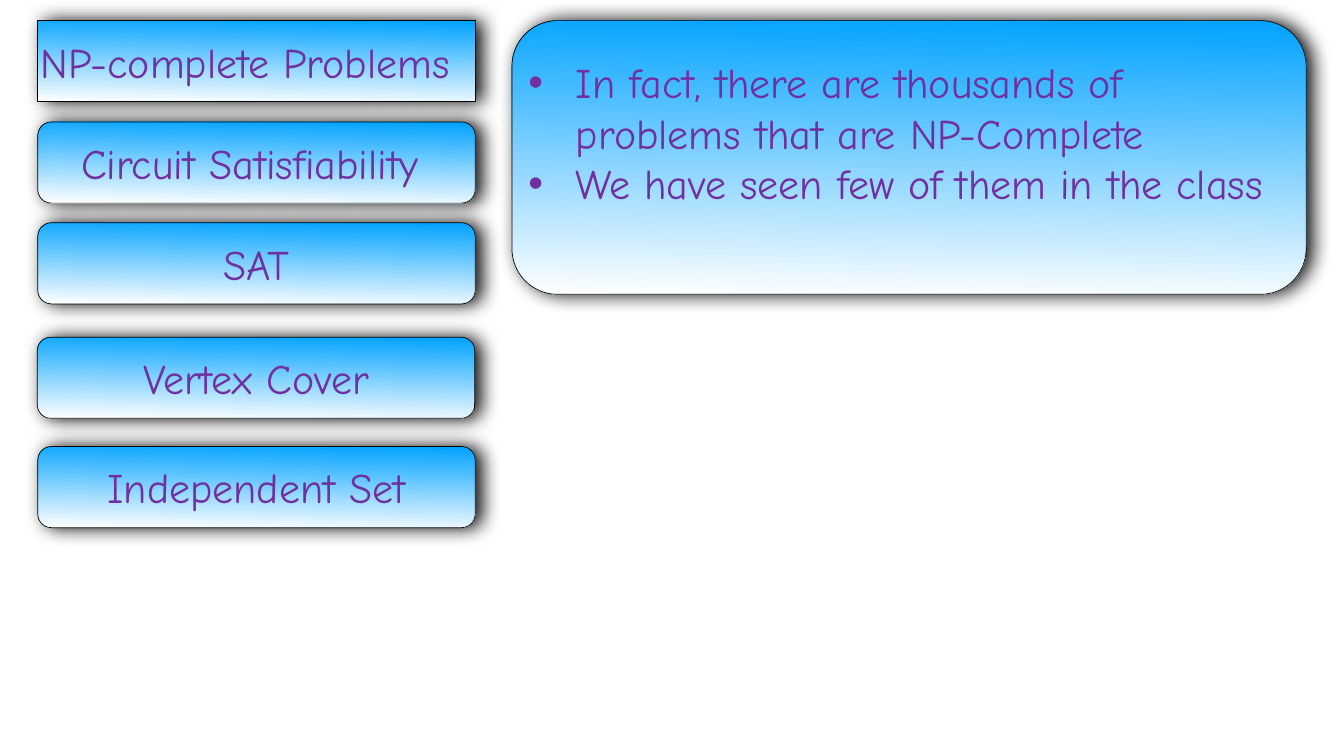
from lxml.etree import SubElement
from pptx import Presentation
from pptx.dml.color import RGBColor
from pptx.enum.shapes import MSO_SHAPE as Preset
from pptx.enum.text import MSO_ANCHOR as Anchor, MSO_AUTO_SIZE as AutoSize, PP_ALIGN as Align
from pptx.oxml import parse_xml
from pptx.oxml.ns import nsdecls, qn
from pptx.util import Inches, Pt

BLUE = RGBColor(0x00, 0xA2, 0xFF)
WHITE = RGBColor(0xFF, 0xFF, 0xFF)
BLACK = RGBColor(0x00, 0x00, 0x00)
PURPLE = RGBColor(0x70, 0x30, 0xA0)

LEFT, TOP = 0.75, 0.41
BOX_WIDTH, BOX_HEIGHT = 8.68, 1.61
PROBLEMS = [
    ("Circuit Satisfiability ", LEFT, 2.42),
    ("SAT", LEFT, 4.42),
    ("Vertex Cover", 0.74, 6.69),
    ("Independent Set", LEFT, 8.86),
]
REMARKS = [
    "In fact, there are thousands of problems that are NP-Complete",
    "We have seen few of them in the class",
]


def assign(target, values):
    for name, value in values.items():
        setattr(target, name, value)


class SlideBuilder:
    font = {"name": "Comic Neue", "size": Pt(60), "bold": False}
    inset = Inches(0.06)
    frame = {
        "word_wrap": True,
        "auto_size": AutoSize.NONE,
        "vertical_anchor": Anchor.MIDDLE,
        "margin_left": inset,
        "margin_top": inset,
        "margin_right": inset,
        "margin_bottom": inset,
    }
    indent = Inches(0.94)

    def __init__(self, slide):
        self.slide = slide

    def decorate(self, box):
        box.fill.gradient()
        box.fill.gradient_angle = 269
        for stop, color in zip(box.fill.gradient_stops, (BLUE, WHITE)):
            stop.color.rgb = color
        box.line.color.rgb = BLACK
        box.line.width = Pt(1)
        box.shadow.inherit = False
        effects = box._element.spPr.find(qn("a:effectLst"))
        shadow = SubElement(effects, qn("a:outerShdw"), blurRad=str(Pt(28)),
                            dist=str(Pt(9)), dir="0", rotWithShape="0")
        color = SubElement(shadow, qn("a:srgbClr"), val=str(BLACK))
        SubElement(color, qn("a:alpha"), val="97000")

    def set_text(self, box, lines, align):
        assign(box.text_frame, self.frame)
        box.text_frame.text = "\n".join(lines)
        for paragraph in box.text_frame.paragraphs:
            paragraph.alignment = align
            for run in paragraph.runs:
                assign(run.font, self.font)
                run.font.color.rgb = PURPLE

    def title(self, text, left, top, width, height):
        heading = self.slide.shapes.title
        assign(heading, {"left": Inches(left), "top": Inches(top),
                         "width": Inches(width), "height": Inches(height)})
        outline = parse_xml(f'<a:prstGeom {nsdecls("a")} prst="roundRect"><a:avLst/></a:prstGeom>')
        heading._element.spPr.find(qn("a:xfrm")).addnext(outline)
        self.decorate(heading)
        self.set_text(heading, [text], Align.LEFT)

    def box(self, lines, left, top, width, height, align=Align.CENTER):
        panel = self.slide.shapes.add_shape(
            Preset.ROUNDED_RECTANGLE, Inches(left), Inches(top), Inches(width), Inches(height))
        self.decorate(panel)
        self.set_text(panel, lines, align)
        return panel

    def bullet_box(self, lines, left, top, width, height, bottom_inset):
        panel = self.box(lines, left, top, width, height, Align.LEFT)
        panel.text_frame.margin_bottom = Inches(bottom_inset)
        for paragraph in panel.text_frame.paragraphs:
            properties = paragraph._p.get_or_add_pPr()
            properties.set("marL", str(self.indent))
            properties.set("indent", str(-self.indent))
            SubElement(properties, qn("a:buFont"), typeface="Arial")
            SubElement(properties, qn("a:buChar"), char="•")


def main():
    deck = Presentation()
    assign(deck, {"slide_width": Inches(26.67), "slide_height": Inches(15)})
    builder = SlideBuilder(deck.slides.add_slide(deck.slide_layouts[5]))
    builder.title("NP-complete Problems", LEFT, TOP, BOX_WIDTH, BOX_HEIGHT)
    for problem, left, top in PROBLEMS:
        builder.box([problem], left, top, BOX_WIDTH, BOX_HEIGHT)
    builder.bullet_box(REMARKS, 10.16, TOP, 15.76, 5.43, bottom_inset=1.06)
    deck.save("out.pptx")


if __name__ == "__main__":
    main()
